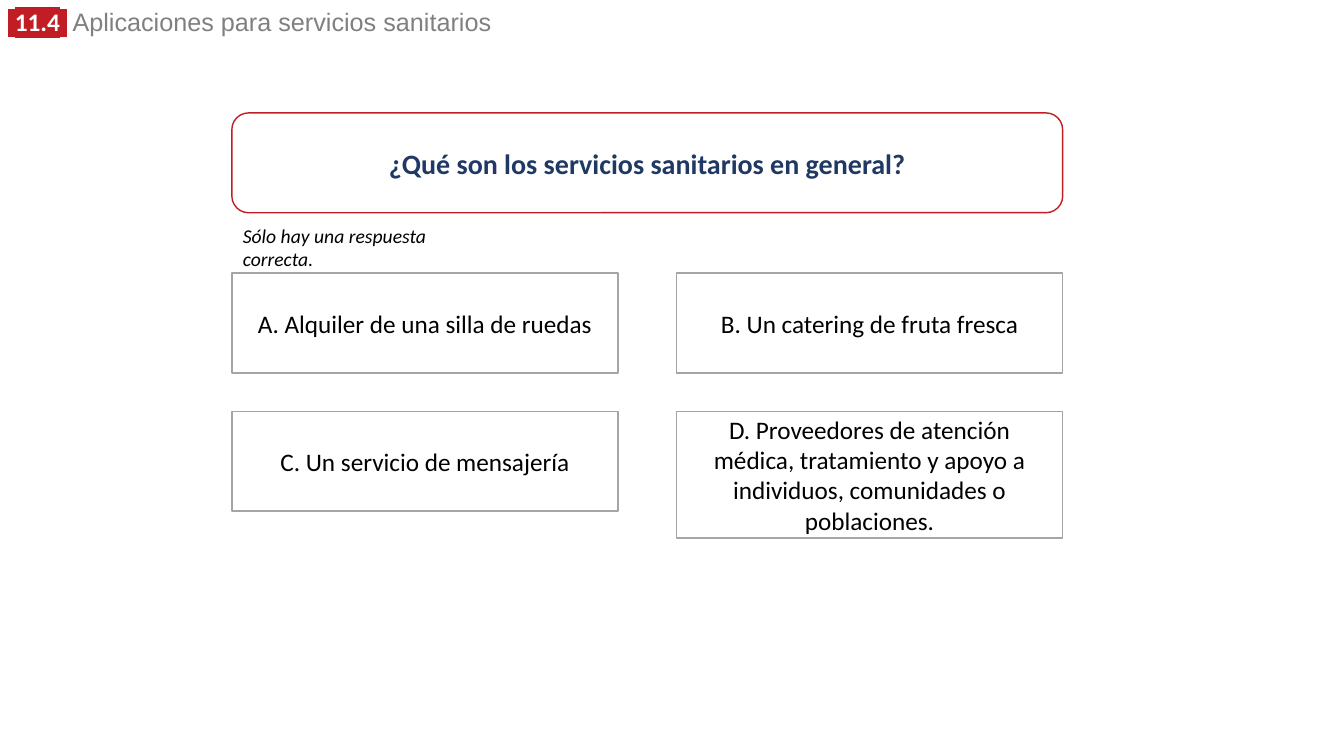
from lxml import etree
from pptx import Presentation
from pptx.dml.color import RGBColor
from pptx.enum.shapes import MSO_SHAPE as Shape
from pptx.enum.text import MSO_ANCHOR as Anchor, MSO_AUTO_SIZE as AutoSize, PP_ALIGN as Align
from pptx.oxml.ns import qn
from pptx.util import Inches, Pt

# Content
SECTION_NUMBER = "11.4"
SECTION_TITLE = " Aplicaciones para servicios sanitarios"
QUESTION = "¿Qué son los servicios sanitarios en general?"
NOTE = "Sólo hay una respuesta correcta."
ANSWERS = [  # text, box height
    ("A. Alquiler de una silla de ruedas", 0.99),
    ("B. Un catering de fruta fresca", 0.99),
    ("C. Un servicio de mensajería", 0.99),
    ("D. Proveedores de atención médica, tratamiento y apoyo a individuos, "
     "comunidades o poblaciones.", 1.26),
]

# Colours and layout
RED = RGBColor(0xC0, 0x1E, 0x24)
NAVY = RGBColor(0x20, 0x38, 0x64)
GREY = RGBColor(0x80, 0x80, 0x80)
BORDER = RGBColor(0xA5, 0xA5, 0xA5)
WHITE = RGBColor(0xFF, 0xFF, 0xFF)
BLACK = RGBColor(0, 0, 0)
LEFT, ANSWERS_TOP = 2.3, 2.71
ANSWER_WIDTH, COLUMN_STEP, ROW_STEP = 3.83, 4.41, 1.37


def style_run(run, size, color, font="Calibri", bold=False, italic=False):
    run.font.name = font
    run.font.size = Pt(size)
    run.font.bold = bold
    run.font.italic = italic
    run.font.color.rgb = color


def highlight(run, color):
    mark = etree.Element(qn("a:highlight"))
    etree.SubElement(mark, qn("a:srgbClr"), val=str(color))
    run.font.color.rgb = WHITE
    run.font._element.find(qn("a:solidFill")).addnext(mark)


def add_text_box(slide, left, top, width, height):
    frame = slide.shapes.add_textbox(
        Inches(left), Inches(top), Inches(width), Inches(height)).text_frame
    frame.word_wrap = True
    frame.auto_size = AutoSize.SHAPE_TO_FIT_TEXT
    return frame


def add_box(slide, kind, left, top, width, height, text, border, size, color, bold=False):
    box = slide.shapes.add_shape(
        kind, Inches(left), Inches(top), Inches(width), Inches(height))
    box.shadow.inherit = False
    box.fill.solid()
    box.fill.fore_color.rgb = WHITE
    box.line.color.rgb = border
    box.line.width = Pt(1)
    frame = box.text_frame
    frame.word_wrap = True
    frame.vertical_anchor = Anchor.MIDDLE
    frame.text = text
    paragraph = frame.paragraphs[0]
    paragraph.alignment = Align.CENTER
    style_run(paragraph.runs[0], size, color, bold=bold)


def main():
    presentation = Presentation()
    presentation.slide_width = Inches(13.33)
    presentation.slide_height = Inches(7.5)
    slide = presentation.slides.add_slide(presentation.slide_layouts[6])

    # Section heading with its highlighted number
    paragraph = add_text_box(slide, -0.02, 0.07, 9.52, 0.35).paragraphs[0]
    paragraph.line_spacing = 0.8
    for text, font in ((" ", "Arial"), (SECTION_NUMBER, "Calibri"), (" ", "Arial")):
        run = paragraph.add_run()
        run.text = text
        style_run(run, 18, WHITE, font, bold=True)
        highlight(run, RED)
    run = paragraph.add_run()
    run.text = SECTION_TITLE
    style_run(run, 18, GREY, "Arial")

    # Question
    add_box(slide, Shape.ROUNDED_RECTANGLE, LEFT, 1.12, COLUMN_STEP + ANSWER_WIDTH, 0.99,
            QUESTION, RED, 20, NAVY, bold=True)

    # Answers in two columns
    for index, (text, height) in enumerate(ANSWERS):
        row, column = divmod(index, 2)
        add_box(slide, Shape.RECTANGLE, LEFT + column * COLUMN_STEP,
                ANSWERS_TOP + row * ROW_STEP, ANSWER_WIDTH, height,
                text, BORDER, 18, BLACK)

    # Note under the question
    frame = add_text_box(slide, 2.31, 2.17, 2.36, 0.34)
    frame.text = NOTE
    style_run(frame.paragraphs[0].runs[0], 14, BLACK, italic=True)

    presentation.save("out.pptx")


if __name__ == "__main__":
    main()
